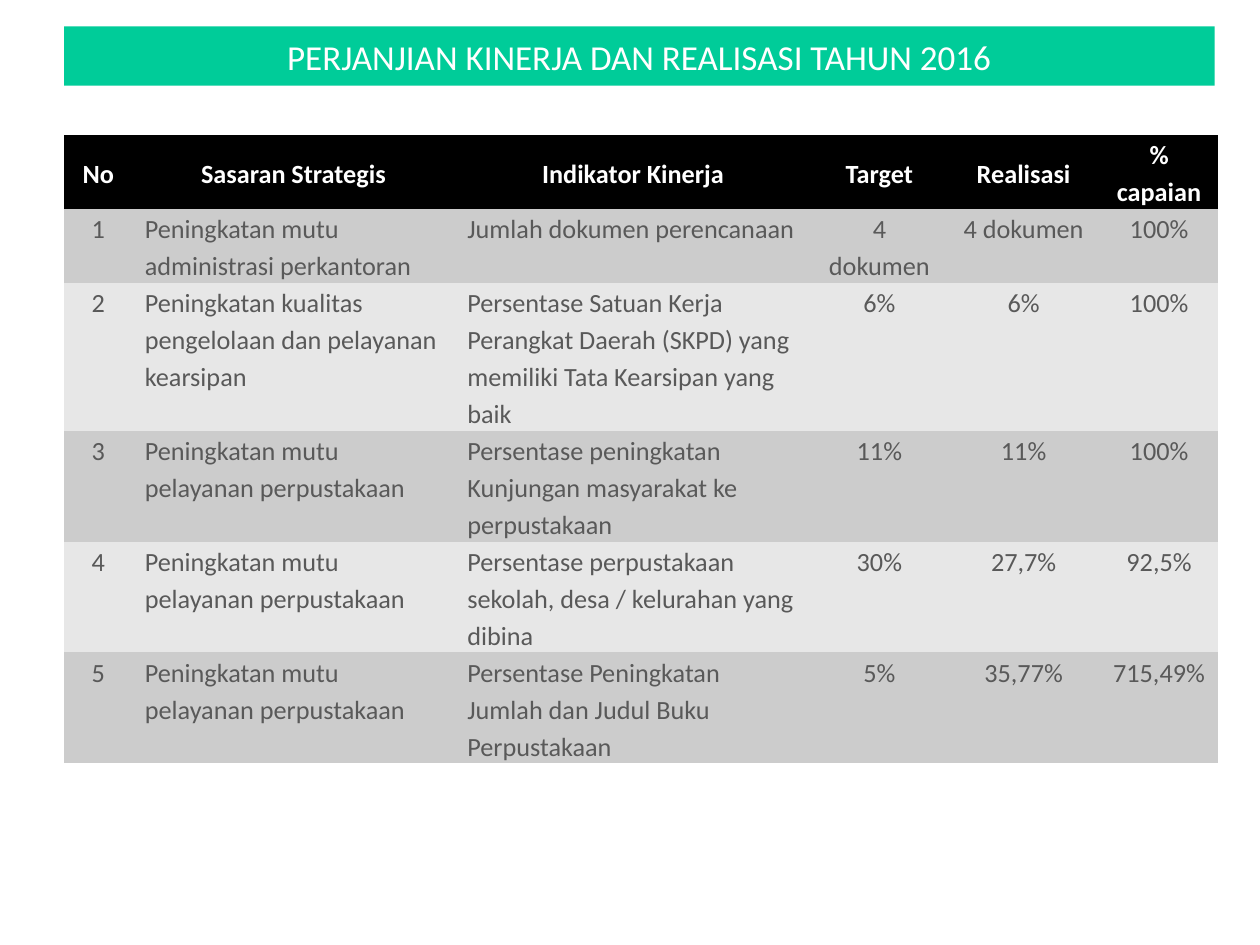
from dataclasses import astuple, dataclass

from pptx import Presentation
from pptx.dml.color import RGBColor
from pptx.enum import text
from pptx.util import Inches, Pt


@dataclass(frozen=True)
class Theme:
    font: str = "Calibri"
    title_size: float = 20
    table_size: float = 15
    white: str = "FFFFFF"
    banner: str = "00CC99"
    header: str = "000000"
    body_text: str = "595959"
    bands: tuple[str, str] = ("CCCCCC", "E7E7E7")


@dataclass(frozen=True)
class Column:
    heading: str
    width: float
    alignment: text.PP_ALIGN = text.PP_ALIGN.CENTER


@dataclass(frozen=True)
class Indicator:
    number: str
    goal: str
    measure: str
    target: str
    realization: str
    achievement: str


THEME = Theme()
LEFT = 0.51
NO_GRID_STYLE = "{2D5ABB26-0587-4C30-8999-92F81FD0307C}"
LIBRARY_GOAL = "Peningkatan mutu pelayanan perpustakaan"

COLUMNS = [
    Column("No", 0.54),
    Column("Sasaran Strategis", 2.56, text.PP_ALIGN.LEFT),
    Column("Indikator Kinerja", 2.83, text.PP_ALIGN.LEFT),
    Column("Target", 1.08),
    Column("Realisasi", 1.21),
    Column("% capaian", 0.94),
]
ROW_HEIGHTS = [0.56, 0.56, 1.14, 0.85, 0.85, 0.85]
INDICATORS = [
    Indicator("1", "Peningkatan mutu administrasi perkantoran",
              "Jumlah dokumen perencanaan", "4 dokumen", "4 dokumen", "100%"),
    Indicator("2", "Peningkatan kualitas pengelolaan dan pelayanan kearsipan",
              "Persentase Satuan Kerja Perangkat Daerah (SKPD) yang memiliki Tata Kearsipan yang baik",
              "6%", "6%", "100%"),
    Indicator("3", LIBRARY_GOAL,
              "Persentase peningkatan Kunjungan masyarakat ke perpustakaan",
              "11%", "11%", "100%"),
    Indicator("4", LIBRARY_GOAL,
              "Persentase perpustakaan sekolah, desa / kelurahan yang dibina",
              "30%", "27,7%", "92,5%"),
    Indicator("5", LIBRARY_GOAL,
              "Persentase Peningkatan Jumlah dan Judul Buku Perpustakaan",
              "5%", "35,77%", "715,49%"),
]


def set_attributes(target: object, values: dict) -> None:
    for name, value in values.items():
        setattr(target, name, value)


def fill_solid(target, color: str) -> None:
    target.fill.solid()
    target.fill.fore_color.rgb = RGBColor.from_string(color)


def format_paragraph(paragraph, size: float, color: str, bold: bool,
                     alignment: text.PP_ALIGN, line_spacing: float) -> None:
    set_attributes(paragraph, {"alignment": alignment, "line_spacing": line_spacing})
    font = paragraph.runs[0].font
    set_attributes(font, {"name": THEME.font, "size": Pt(size), "bold": bold})
    font.color.rgb = RGBColor.from_string(color)


def draw_title(slide, title_text: str) -> None:
    title = slide.shapes.title
    set_attributes(title, {"left": Inches(LEFT), "top": Inches(0.21),
                           "width": Inches(9.13), "height": Inches(0.47)})
    fill_solid(title, THEME.banner)
    frame = title.text_frame
    set_attributes(frame, {"text": title_text, "word_wrap": True,
                           "auto_size": text.MSO_AUTO_SIZE.NONE,
                           "vertical_anchor": text.MSO_ANCHOR.MIDDLE})
    format_paragraph(frame.paragraphs[0], THEME.title_size, THEME.white,
                     False, text.PP_ALIGN.CENTER, 1.0)


def draw_cell(cell, content: str, fill: str, color: str, is_header: bool,
              alignment: text.PP_ALIGN) -> None:
    fill_solid(cell, fill)
    anchor = text.MSO_ANCHOR.MIDDLE if is_header else text.MSO_ANCHOR.TOP
    set_attributes(cell, {"text": content, "vertical_anchor": anchor,
                          "margin_left": Inches(0.1), "margin_right": Inches(0.1),
                          "margin_top": 0, "margin_bottom": 0})
    format_paragraph(cell.text_frame.paragraphs[0], THEME.table_size, color,
                     is_header, alignment, 1.15)


def draw_table(slide) -> None:
    frame = slide.shapes.add_table(
        len(INDICATORS) + 1, len(COLUMNS), Inches(LEFT), Inches(1.07),
        Inches(sum(column.width for column in COLUMNS)), Inches(sum(ROW_HEIGHTS)))
    table = frame.table
    table._tbl.tblPr.find("{*}tableStyleId").text = NO_GRID_STYLE
    for row, height in zip(table.rows, ROW_HEIGHTS):
        row.height = Inches(height)
    for index, column in enumerate(COLUMNS):
        table.columns[index].width = Inches(column.width)
        draw_cell(table.cell(0, index), column.heading, THEME.header,
                  THEME.white, True, text.PP_ALIGN.CENTER)
    for row_index, indicator in enumerate(INDICATORS):
        band = THEME.bands[row_index % 2]
        for index, (column, content) in enumerate(zip(COLUMNS, astuple(indicator))):
            draw_cell(table.cell(row_index + 1, index), content, band,
                      THEME.body_text, False, column.alignment)


def main() -> None:
    presentation = Presentation()
    set_attributes(presentation, {"slide_width": Inches(10), "slide_height": Inches(7.5)})
    slide = presentation.slides.add_slide(presentation.slide_layouts.get_by_name("Title Only"))
    draw_title(slide, "PERJANJIAN KINERJA DAN REALISASI TAHUN 2016")
    draw_table(slide)
    presentation.save("out.pptx")


if __name__ == "__main__":
    main()
